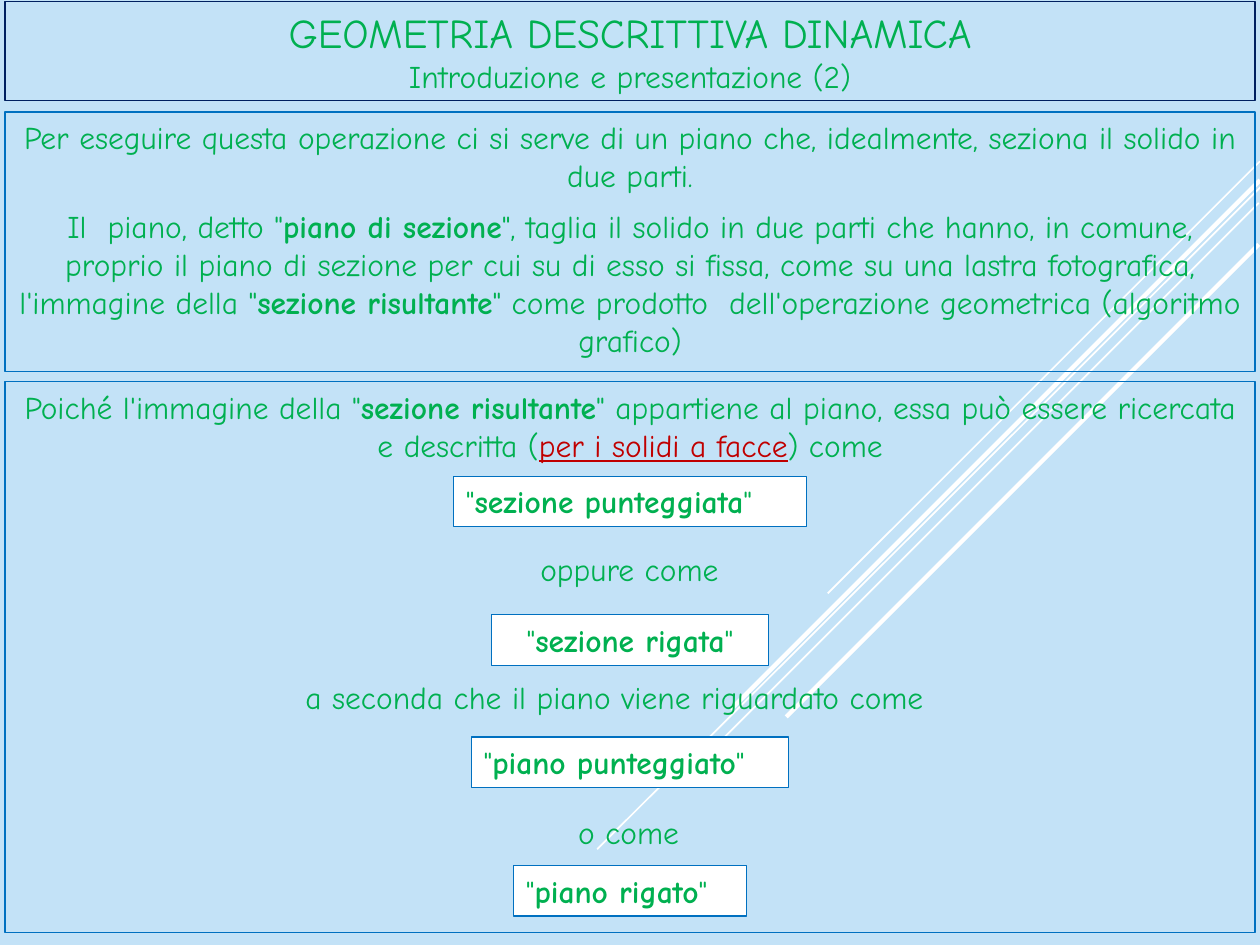
from dataclasses import dataclass

import pptx
import pptx.dml.color
import pptx.enum.shapes
import pptx.enum.text
import pptx.oxml.ns
import pptx.util
from lxml import etree

# The slide is a grid of 100 columns by 75 rows
COLUMNS, ROWS = 100, 75
CELL = pptx.util.Inches(0.1)
MIDDLE = COLUMNS / 2
FONT = "Comic Neue"
COLORS = {
    "sky": "C3E2F7",
    "white": "FFFFFF",
    "green": "00B050",
    "red": "C00000",
    "blue": "0070C0",
    "navy": "002060",
}
ALIGN = pptx.enum.text.PP_ALIGN
ANCHOR = pptx.enum.text.MSO_ANCHOR


@dataclass
class Span:
    text: str
    bold: bool = False
    underline: bool = False
    color: str = "green"
    size: float = 18


@dataclass
class Streak:
    start: tuple[float, float]
    end: tuple[float, float]
    width: float = 1


@dataclass
class Term:
    """A quoted term in a white box centred on the slide."""
    text: str
    row: float
    columns: float
    align: ALIGN = ALIGN.LEFT


@dataclass
class Link:
    """A plain phrase between two terms."""
    text: str
    row: float
    columns: float


def cells(count: float) -> int:
    return round(count * CELL)


def rgb(name: str) -> pptx.dml.color.RGBColor:
    return pptx.dml.color.RGBColor.from_string(COLORS[name])


def write(box, paragraphs: list[list[Span]], *, align=ALIGN.CENTER,
          anchor=ANCHOR.TOP, spacing: float = 0) -> None:
    """Fill a box with paragraphs of spans; a newline span is a line break."""
    frame = box.text_frame
    frame.word_wrap = True
    frame.vertical_anchor = anchor
    for index, spans in enumerate(paragraphs):
        para = frame.add_paragraph() if index else frame.paragraphs[0]
        para.alignment = align
        para.space_before = para.space_after = pptx.util.Pt(spacing)
        for span in spans:
            if span.text == "\n":
                para.add_line_break()
                continue
            run = para.add_run()
            run.text = span.text
            run.font.name = FONT
            run.font.size = pptx.util.Pt(span.size)
            run.font.bold = span.bold
            run.font.underline = span.underline
            run.font.color.rgb = rgb(span.color)


def draw_frame(page, left: float, top: float, width: float, height: float,
               line: str = "blue", fill: str | None = None):
    box = page.shapes.add_shape(pptx.enum.shapes.MSO_SHAPE.RECTANGLE,
                                *map(cells, (left, top, width, height)))
    box.shadow.inherit = False
    if fill:
        box.fill.solid()
        box.fill.fore_color.rgb = rgb(fill)
    else:
        box.fill.background()
    box.line.color.rgb = rgb(line)
    box.line.width = pptx.util.Pt(0.75)
    return box


def draw_streak(page, streak: Streak) -> None:
    line = page.shapes.add_connector(
        pptx.enum.shapes.MSO_CONNECTOR.STRAIGHT,
        *map(cells, (*streak.start, *streak.end)))
    line.line.color.rgb = rgb("white")
    line.line.width = pptx.util.Pt(streak.width)
    etree.SubElement(line._element.spPr, pptx.oxml.ns.qn("a:effectLst"))


def draw_term(page, term: Term) -> None:
    box = draw_frame(page, MIDDLE - term.columns / 2, term.row,
                     term.columns, 4, fill="white")
    write(box, [[Span('"'), Span(term.text, bold=True), Span('"')]],
          align=term.align)


def draw_link(page, link: Link) -> None:
    box = page.shapes.add_textbox(
        *map(cells, (MIDDLE - link.columns / 2, link.row, link.columns, 4)))
    write(box, [[Span(link.text)]], align=ALIGN.LEFT)


STREAKS = [
    Streak((100, 12.8), (65.7, 47.1)),
    Streak((100.1, 14.8), (47.4, 67.4)),
    Streak((99.9, 16.1), (57.1, 58.9)),
    Streak((100, 14.3), (58, 56.3), 2.5),
    Streak((99.9, 19.4), (62.4, 56.9), 2.5),
]
TITLE = [[
    Span("GEOMETRIA DESCRITTIVA DINAMICA", size=23.4),
    Span("\n"),
    Span("Introduzione e presentazione (2)"),
]]
OPERATION = [
    [Span("Per eseguire questa operazione ci si serve di un piano che, "
          "idealmente, seziona il solido in due parti.")],
    [Span('Il  piano, detto "'),
     Span("piano di sezione", bold=True),
     Span('", taglia il solido in due parti che hanno, in comune, proprio il '
          "piano di sezione per cui su di esso si fissa, come su una lastra "
          "fotografica, l'immagine della \""),
     Span("sezione risultante", bold=True),
     Span('" come prodotto  dell\'operazione geometrica '
          "(algoritmo grafico)")],
]
DESCRIPTION = [[
    Span("Poiché l'immagine della \""),
    Span("sezione risultante", bold=True),
    Span('" appartiene al piano, essa può essere ricercata e descritta ('),
    Span("per i solidi a facce", underline=True, color="red"),
    Span(") come"),
]]
TERMS = [
    Term("sezione punteggiata", 37.8, 28),
    Term("sezione rigata", 48.8, 22, ALIGN.CENTER),
    Term("piano punteggiato", 58.5, 25.2),
    Term("piano rigato", 68.7, 18.5),
]
LINKS = [
    Link("oppure come", 43.2, 16.2),
    Link("a seconda che il piano viene riguardato come", 53.3, 53.5),
    Link("o come", 64, 10.2),
]


def main() -> None:
    deck = pptx.Presentation()
    deck.slide_width, deck.slide_height = cells(COLUMNS), cells(ROWS)
    page = deck.slides.add_slide(deck.slide_layouts[6])
    page.background.fill.solid()
    page.background.fill.fore_color.rgb = rgb("sky")

    # Diagonal streaks behind the text
    for streak in STREAKS:
        draw_streak(page, streak)

    # Three full-width frames
    margin = 0.4
    width = COLUMNS - 2 * margin
    write(draw_frame(page, margin, 0.1, width, 7.9, line="navy"), TITLE,
          anchor=ANCHOR.BOTTOM)
    write(draw_frame(page, margin, 8.9, width, 20.6), OPERATION, spacing=3.8)
    write(draw_frame(page, margin, 30.3, width, 43.7), DESCRIPTION, spacing=3.8)

    # Terms and the phrases between them
    for term in TERMS:
        draw_term(page, term)
    for link in LINKS:
        draw_link(page, link)

    deck.save("out.pptx")


if __name__ == "__main__":
    main()
